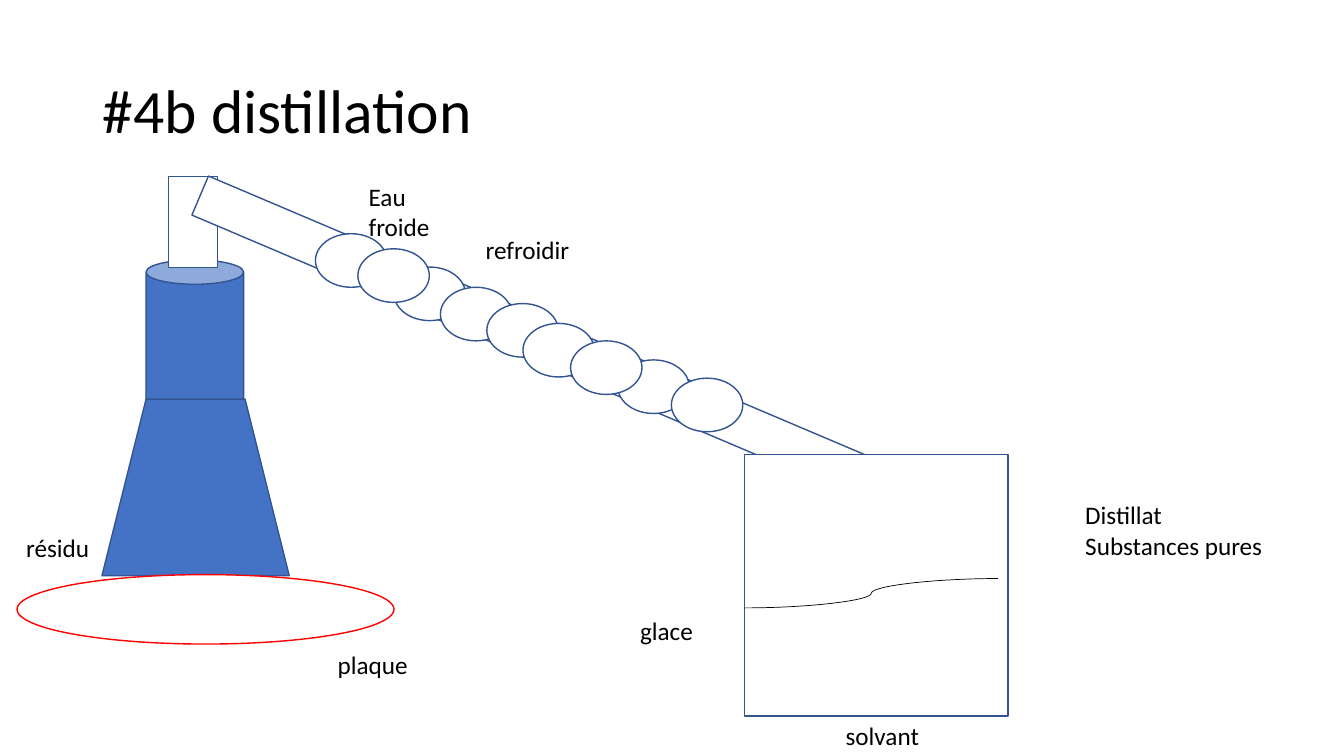
from lxml import etree
from pptx import Presentation
from pptx.dml.color import RGBColor
from pptx.enum.shapes import MSO_CONNECTOR, MSO_SHAPE
from pptx.enum.text import MSO_ANCHOR, MSO_AUTO_SIZE, PP_ALIGN
from pptx.oxml.ns import qn
from pptx.util import Cm, Pt

CAN, TRAP = MSO_SHAPE.CAN, MSO_SHAPE.TRAPEZOID
RECT, OVAL = MSO_SHAPE.RECTANGLE, MSO_SHAPE.OVAL
CURVE = MSO_CONNECTOR.CURVE
MIDDLE, LEFT = MSO_ANCHOR.MIDDLE, PP_ALIGN.LEFT
GROW = MSO_AUTO_SIZE.SHAPE_TO_FIT_TEXT

FONT = "Calibri"
COLORS = {"blue": "4472C4", "edge": "325491", "red": "FF0000",
          "white": "FFFFFF", "black": "000000"}

# Left and top of each cooling coil, from back to front
COILS = [(7.95, 5.89), (9.93, 6.73), (9.02, 6.27), (11.1, 7.24),
         (12.27, 7.65), (13.18, 8.15), (15.57, 9.07), (14.38, 8.59),
         (16.92, 9.53)]

# Left, top, width, height and lines of each label
LABELS = [(0.41, 13.28, 2.95, 1.02, ["résidu"]),
          (8.26, 16.23, 2.95, 1.02, ["plaque"]),
          (9.04, 4.45, 2.95, 1.8, ["Eau froide"]),
          (11.99, 5.77, 2.95, 1.02, ["refroidir"]),
          (27.1, 12.47, 5.46, 1.8, ["Distillat", "Substances pures"]),
          (21.06, 18.03, 2.95, 1.02, ["solvant"]),
          (15.88, 15.37, 2.95, 1.02, ["glace"])]


def color(name):
    return RGBColor.from_string(COLORS[name])


def style(para, size):
    para.font.name = FONT
    para.font.size = Pt(size)
    para.font.color.rgb = color("black")


def add_title(slide, text):
    title = slide.shapes.title
    title.left, title.top = Cm(2.34), Cm(1.02)
    title.width, title.height = Cm(29.21), Cm(3.68)
    frame = title.text_frame
    frame.text = text
    frame.vertical_anchor = MIDDLE
    para = frame.paragraphs[0]
    para.alignment = LEFT
    para.line_spacing = 0.9
    style(para, 44)


def add_part(slide, kind, box, fill="white", edge="edge", turn=0):
    part = slide.shapes.add_shape(kind, *map(Cm, box))
    part.shadow.inherit = False
    part.rotation = turn
    part.fill.solid()
    part.fill.fore_color.rgb = color(fill)
    part.line.color.rgb = color(edge)
    part.line.width = Pt(1)


def add_curve(slide, *ends):
    curve = slide.shapes.add_connector(CURVE, *map(Cm, ends))
    curve.line.color.rgb = color("black")
    curve.line.width = Pt(0.5)
    etree.SubElement(curve._element.spPr, qn("a:effectLst"))


def add_label(slide, left, top, width, height, lines):
    box = slide.shapes.add_textbox(Cm(left), Cm(top), Cm(width), Cm(height))
    frame = box.text_frame
    frame.word_wrap = True
    frame.auto_size = GROW
    frame.text = "\n".join(lines)
    for para in frame.paragraphs:
        style(para, 18)


def main():
    deck = Presentation()
    deck.slide_width, deck.slide_height = Cm(33.87), Cm(19.05)
    slide = deck.slides.add_slide(deck.slide_layouts[5])
    add_title(slide, "#4b distillation")

    # Flask, neck and cooling tube
    add_part(slide, CAN, (3.68, 6.55, 2.46, 3.89), fill="blue")
    add_part(slide, TRAP, (2.57, 10.06, 4.72, 4.45), fill="blue")
    add_part(slide, RECT, (4.24, 4.45, 1.24, 2.29))
    add_part(slide, RECT, (12.83, -0.58, 1.07, 18.08), turn=113)

    # Hot plate, then the jar with its liquid level
    add_part(slide, OVAL, (0.43, 14.48, 9.5, 1.75), edge="red")
    add_part(slide, RECT, (18.77, 11.46, 6.63, 6.58))
    add_curve(slide, 18.77, 15.32, 25.15, 14.58)

    # Coils around the tube
    for left, top in COILS:
        add_part(slide, OVAL, (left, top, 1.8, 1.35))

    for label in LABELS:
        add_label(slide, *label)

    deck.save("out.pptx")


if __name__ == "__main__":
    main()
